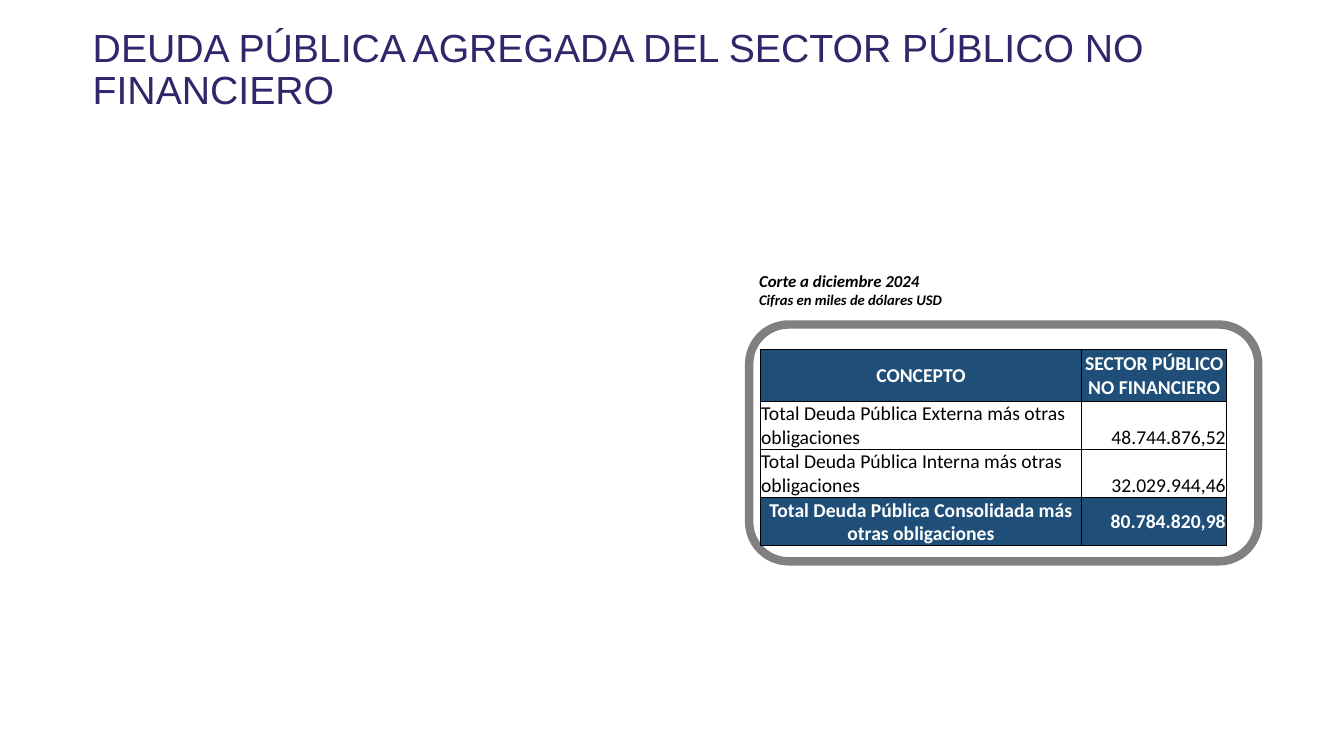
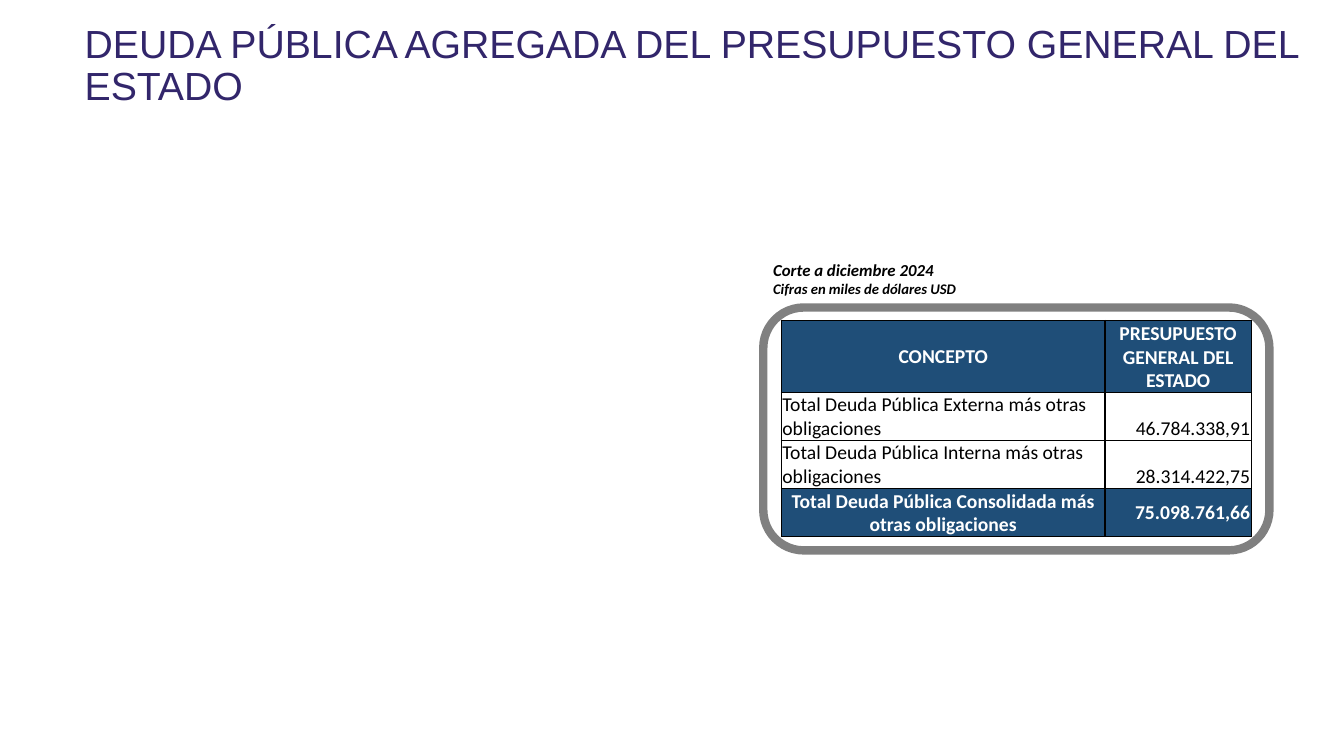
from lxml import etree
from pptx import Presentation
from pptx import util as u
from pptx.dml.color import RGBColor
from pptx.enum import shapes, text
from pptx.oxml.ns import qn

TITLE, NAVY, GRAY, BLACK, WHITE = "32266B", "1F4E78", "808080", "000000", "FFFFFF"
LEFT, CENTER, RIGHT = text.PP_ALIGN.LEFT, text.PP_ALIGN.CENTER, text.PP_ALIGN.RIGHT
MIDDLE, BOTTOM = text.MSO_ANCHOR.MIDDLE, text.MSO_ANCHOR.BOTTOM


def color(hex_text):
    return RGBColor.from_string(hex_text)


def write(paragraph, words, size, font="Calibri", fill=BLACK, bold=False,
          italic=False, align=LEFT, spacing=1.0):
    paragraph.alignment = align
    paragraph.line_spacing = spacing
    run = paragraph.add_run()
    run.text = words
    run.font.name, run.font.size = font, u.Pt(size)
    run.font.bold, run.font.italic = bold, italic
    run.font.color.rgb = color(fill)


presentation = Presentation()
presentation.slide_width, presentation.slide_height = u.Inches(13.33), u.Inches(7.5)

# Grid: one hundred columns by one hundred rows
column = presentation.slide_width / 100
row = presentation.slide_height / 100
grid = (column, row, column, row)

# Places are left, top, width, height in grid units
debts = [
    dict(title="DEUDA PÚBLICA AGREGADA DEL SECTOR PÚBLICO NO FINANCIERO",
         title_at=(6.15, 0, 90.25, 18.8), note_at=(55.74, 35.07, 33.16, 6.53),
         frame_at=(55.74, 42.93, 37.88, 31.33), table_at=(56.56, 46.27),
         widths=(23.93, 10.8), heights=(6.8, 5.6, 5.6, 6),
         sector="SECTOR PÚBLICO NO FINANCIERO",
         amounts=("48.744.876,52", "32.029.944,46", "80.784.820,98")),
    dict(title="DEUDA PÚBLICA AGREGADA DEL PRESUPUESTO GENERAL DEL ESTADO",
         title_at=(5.55, 0.93, 92.72, 15.87), note_at=(56.79, 33.07, 32.71, 7.6),
         frame_at=(56.79, 40.67, 37.66, 32.13), table_at=(58.14, 42.4),
         widths=(24.08, 10.88), heights=(8.67, 5.87, 5.87, 5.87),
         sector="PRESUPUESTO GENERAL DEL ESTADO",
         amounts=("46.784.338,91", "28.314.422,75", "75.098.761,66")),
]
concepts = ["CONCEPTO"] + [f"Total Deuda Pública {kind} más otras obligaciones"
                           for kind in ("Externa", "Interna", "Consolidada")]

for debt in debts:
    slide = presentation.slides.add_slide(presentation.slide_layouts[5])

    # Title
    title = slide.shapes.title
    title.left, title.top, title.width, title.height = (
        round(share * unit) for share, unit in zip(debt["title_at"], grid))
    title.text_frame.vertical_anchor = MIDDLE
    title.text_frame.word_wrap = True
    title.text_frame.auto_size = text.MSO_AUTO_SIZE.NONE
    write(title.text_frame.paragraphs[0], debt["title"], 28, font="Arial",
          fill=TITLE, spacing=0.9)

    # Date and unit note
    note = slide.shapes.add_textbox(
        *(round(share * unit) for share, unit in zip(debt["note_at"], grid))).text_frame
    note.word_wrap = True
    note.vertical_anchor = MIDDLE
    write(note.paragraphs[0], "Corte a diciembre 2024", 12, bold=True, italic=True)
    write(note.add_paragraph(), "Cifras en miles de dólares USD", 10.5, bold=True, italic=True)

    # Rounded frame
    frame = slide.shapes.add_shape(
        shapes.MSO_SHAPE.ROUNDED_RECTANGLE,
        *(round(share * unit) for share, unit in zip(debt["frame_at"], grid)))
    frame.shadow.inherit = False
    frame.fill.background()
    frame.line.color.rgb = color(GRAY)
    frame.line.width = u.Pt(6)

    # Debt table
    table_at = debt["table_at"] + (sum(debt["widths"]), sum(debt["heights"]))
    table = slide.shapes.add_table(
        len(concepts), 2,
        *(round(share * unit) for share, unit in zip(table_at, grid))).table
    table.first_row = table.horz_banding = False
    for table_column, width in zip(table.columns, debt["widths"]):
        table_column.width = round(width * column)
    for table_row, height in zip(table.rows, debt["heights"]):
        table_row.height = round(height * row)

    records = list(zip(concepts, (debt["sector"],) + debt["amounts"]))
    for r, record in enumerate(records):
        banded = r in (0, len(records) - 1)
        for c, words in enumerate(record):
            cell = table.cell(r, c)
            cell.margin_left = cell.margin_top = cell.margin_right = u.Inches(0.01)
            cell.margin_bottom = 0
            cell.vertical_anchor = MIDDLE if banded else BOTTOM
            for side in ("a:lnL", "a:lnR", "a:lnT", "a:lnB"):
                border = etree.SubElement(cell._tc.get_or_add_tcPr(), qn(side), w=str(u.Pt(1)))
                paint = etree.SubElement(border, qn("a:solidFill"))
                etree.SubElement(paint, qn("a:srgbClr"), val=BLACK)
            if banded:
                cell.fill.solid()
                cell.fill.fore_color.rgb = color(NAVY)
            else:
                cell.fill.background()
            if r == 0 or (banded and c == 0):
                align = CENTER
            else:
                align = RIGHT if c else LEFT
            write(cell.text_frame.paragraphs[0], words, 14, bold=banded,
                  fill=WHITE if banded else BLACK, align=align)

presentation.save("out.pptx")
